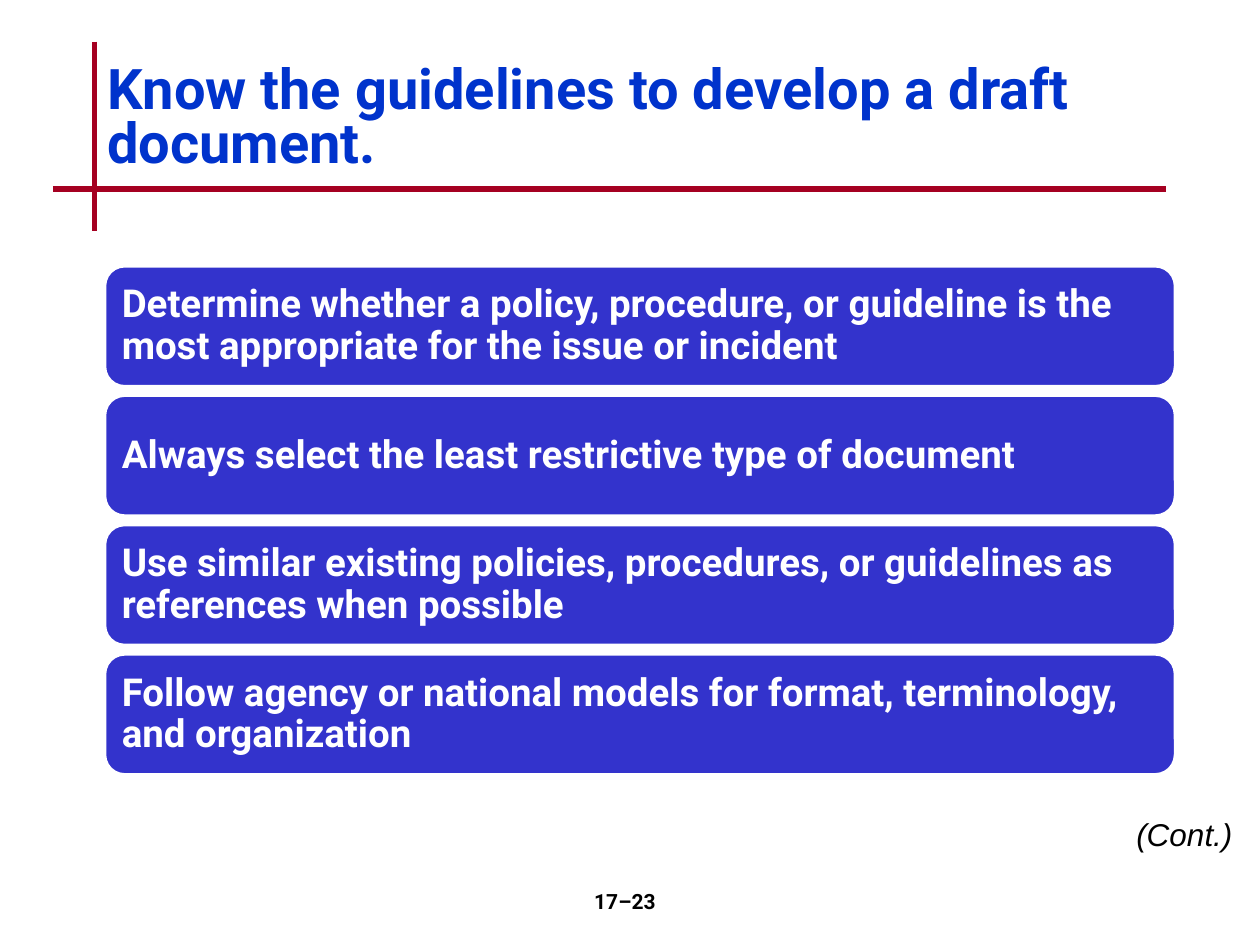
from pptx import Presentation
from pptx.dml.color import RGBColor
from pptx.enum.shapes import MSO_CONNECTOR, MSO_SHAPE
from pptx.enum.text import MSO_ANCHOR, MSO_AUTO_SIZE, PP_ALIGN
from pptx.oxml.ns import qn
from pptx.util import Inches, Pt
from lxml import etree

LINE = MSO_CONNECTOR.STRAIGHT
ROUNDED = MSO_SHAPE.ROUNDED_RECTANGLE
MIDDLE = MSO_ANCHOR.MIDDLE
LEFT, CENTER = PP_ALIGN.LEFT, PP_ALIGN.CENTER
FIT_SHAPE = MSO_AUTO_SIZE.SHAPE_TO_FIT_TEXT
NO_FIT = MSO_AUTO_SIZE.NONE

GUIDELINES = [
    "Determine whether a policy, procedure, or guideline is the most "
    "appropriate for the issue or incident",
    "Always select the least restrictive type of document",
    "Use similar existing policies, procedures, or guidelines as "
    "references when possible",
    "Follow agency or national models for format, terminology, "
    "and organization",
]


def rgb(value):
    return RGBColor.from_string(value)


class SlideBuilder:
    RED, BLUE, TITLE = "A50021", "3333CC", "0033CC"
    WHITE, BLACK = "FFFFFF", "000000"
    FONT, NOTE_FONT = "Roboto", "Arial"

    def __init__(self, slide):
        self.s = slide

    def add_text(self, tf, text, size, color, font=FONT, bold=True,
                 italic=False, align=LEFT, spacing=None):
        p = tf.paragraphs[0]
        p.alignment = align
        p.space_before = Pt(0)
        if spacing:
            p.line_spacing = spacing
        r = p.add_run()
        r.text = text
        r.font.name, r.font.size = font, Pt(size)
        r.font.bold, r.font.italic = bold, italic
        r.font.color.rgb = rgb(color)

    def rule(self, x1, y1, x2, y2):
        c = self.s.shapes.add_connector(
            LINE, Inches(x1), Inches(y1), Inches(x2), Inches(y2))
        c.line.color.rgb = rgb(self.RED)
        c.line.width = Pt(3)
        etree.SubElement(c._element.spPr, qn("a:effectLst"))

    def title(self, text, x, y, w, h):
        sp = self.s.shapes.title
        sp.left, sp.top = Inches(x), Inches(y)
        sp.width, sp.height = Inches(w), Inches(h)
        tf = sp.text_frame
        tf.auto_size = NO_FIT
        tf.vertical_anchor = MIDDLE
        self.add_text(tf, text, 32, self.TITLE, spacing=0.8)

    def bar(self, text, x, y, w, h):
        sp = self.s.shapes.add_shape(
            ROUNDED, Inches(x), Inches(y), Inches(w), Inches(h))
        sp.shadow.inherit = False
        sp.fill.solid()
        sp.fill.fore_color.rgb = rgb(self.BLUE)
        sp.line.color.rgb = rgb(self.WHITE)
        sp.line.width = Pt(2)
        tf = sp.text_frame
        tf.word_wrap = True
        tf.vertical_anchor = MIDDLE
        tf.margin_left = tf.margin_right = Inches(0.09)
        tf.margin_top = tf.margin_bottom = Inches(0.09)
        self.add_text(tf, text, 22, self.WHITE, spacing=0.9)

    def label(self, text, x, y, w, h, size, wrap=True, **style):
        sp = self.s.shapes.add_textbox(
            Inches(x), Inches(y), Inches(w), Inches(h))
        tf = sp.text_frame
        tf.word_wrap = wrap
        tf.auto_size = NO_FIT if wrap else FIT_SHAPE
        self.add_text(tf, text, size, self.BLACK, **style)


def main():
    prs = Presentation()
    prs.slide_width, prs.slide_height = Inches(10), Inches(7.5)
    b = SlideBuilder(prs.slides.add_slide(prs.slide_layouts[5]))

    # Crossed rules and title
    b.rule(0.75, 0.33, 0.75, 1.83)
    b.rule(0.42, 1.5, 9.25, 1.5)
    b.title("Know the guidelines to develop a draft document.",
            0.75, 0.33, 8.5, 1.25)

    # Stack of guideline bars, spread evenly from first to last
    top, last = 2.11, 5.19
    pitch = (last - top) / (len(GUIDELINES) - 1)
    for i, text in enumerate(GUIDELINES):
        b.bar(text, 0.83, top + i * pitch, 8.5, 0.96)

    # Page number and continuation note
    b.label("17–23", 3.92, 7, 2.08, 0.5, 12, align=CENTER)
    b.label("(Cont.)", 8.92, 6.42, 0.97, 0.4, 18, wrap=False,
            font=b.NOTE_FONT, bold=False, italic=True)

    prs.save("out.pptx")


if __name__ == "__main__":
    main()
